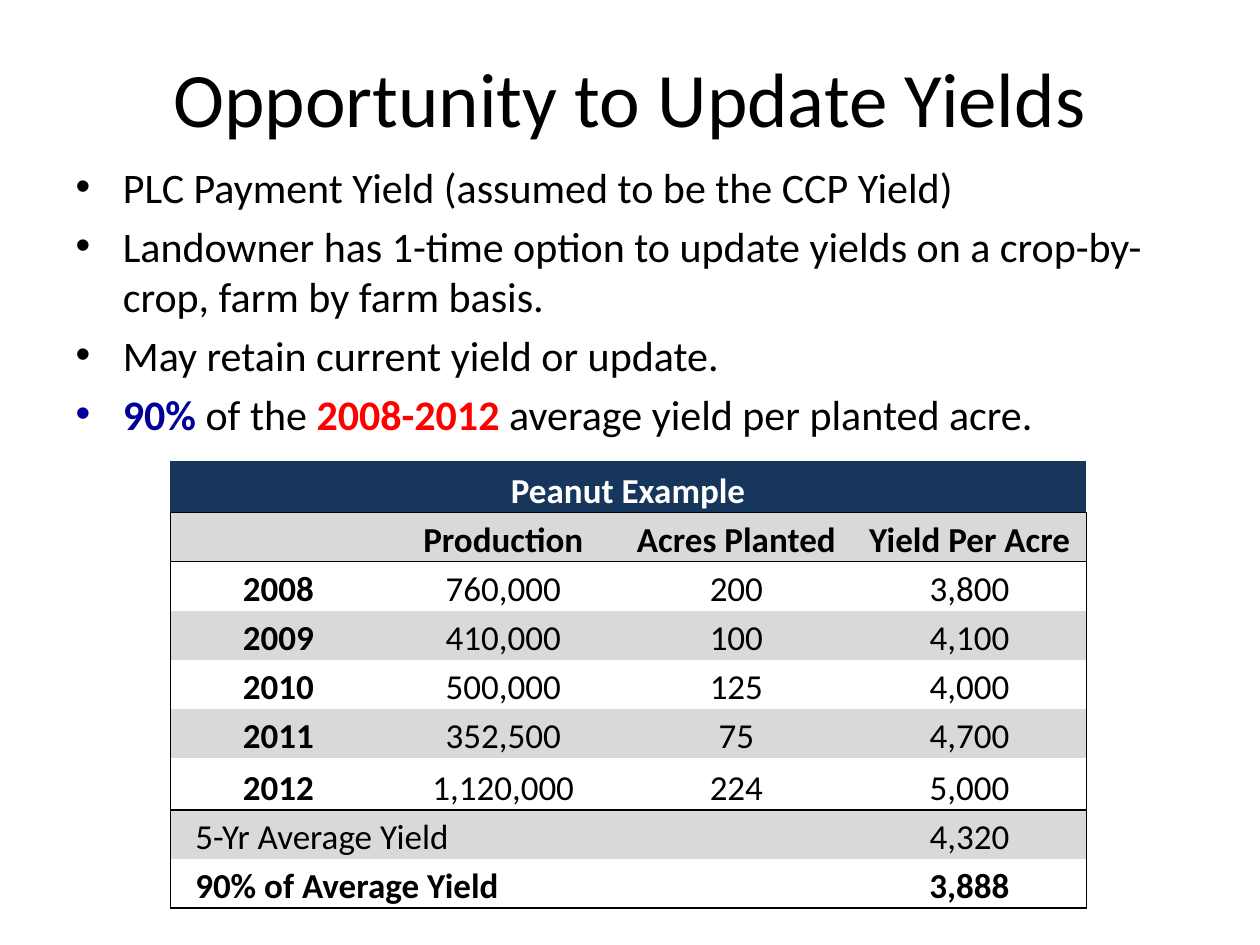
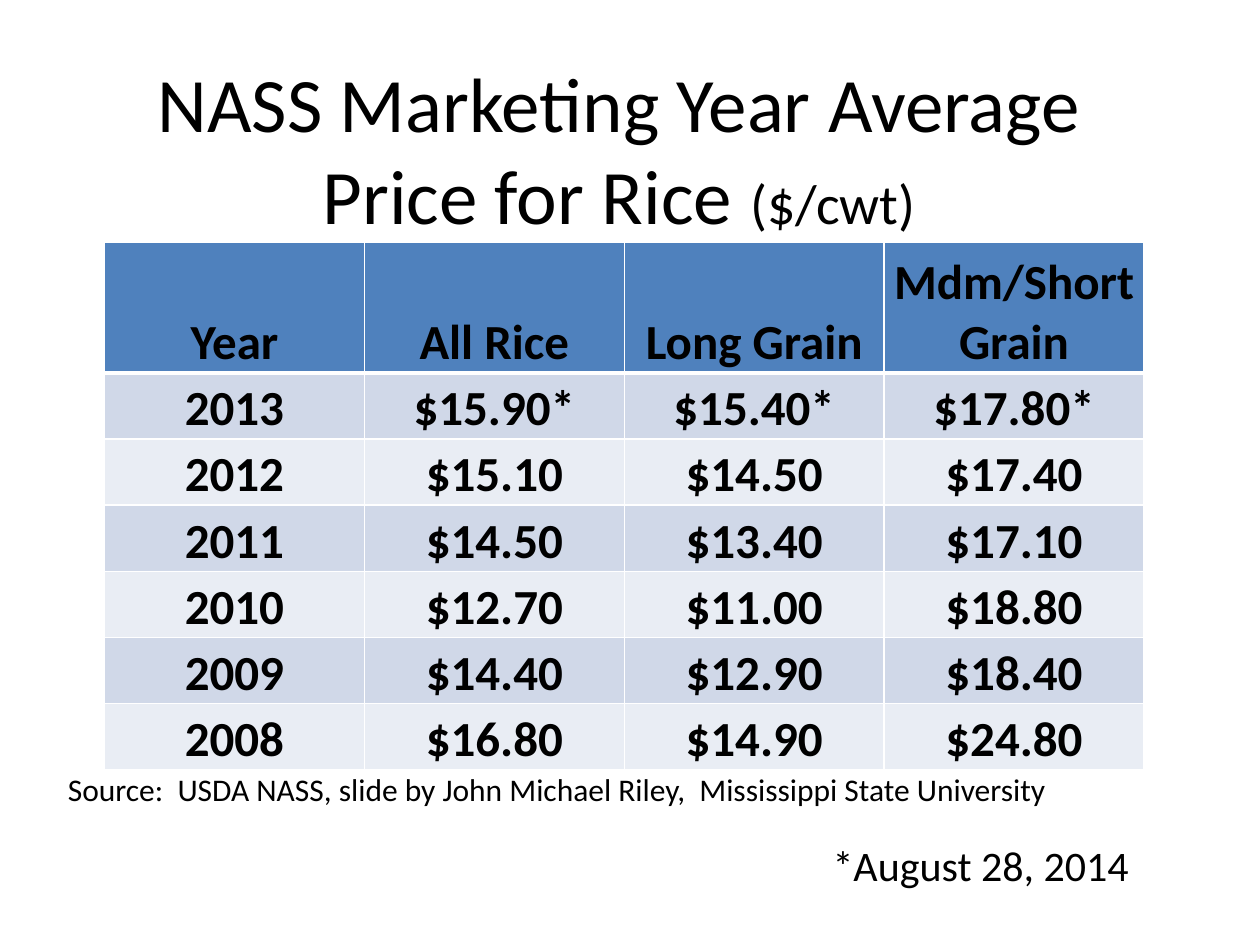
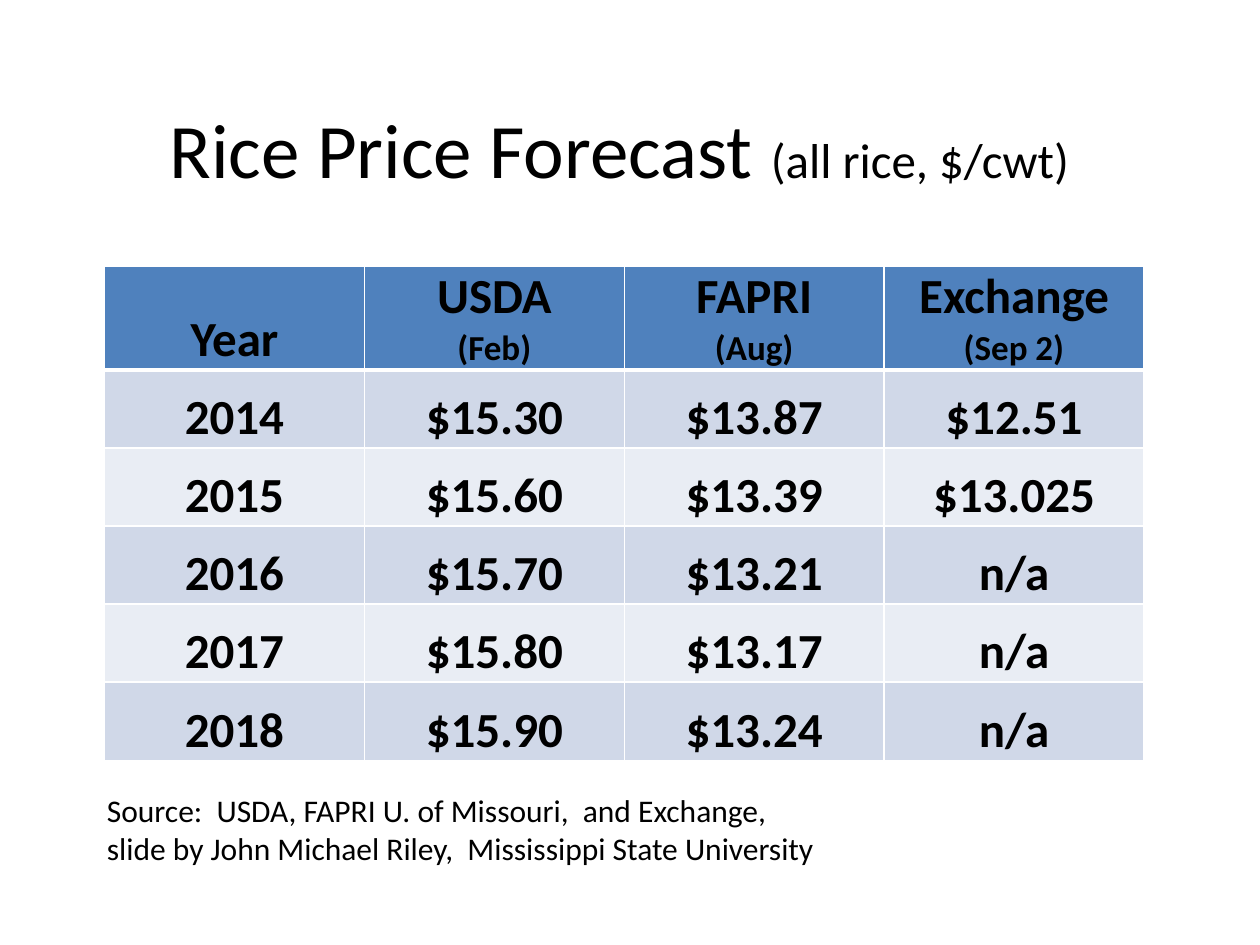
from lxml import etree
from pptx import Presentation
from pptx.dml.color import RGBColor
from pptx.enum.shapes import MSO_SHAPE
from pptx.enum.text import MSO_ANCHOR, MSO_AUTO_SIZE, PP_ALIGN
from pptx.oxml.ns import qn
from pptx.util import Inches, Pt

LEFT, CENTER = PP_ALIGN.LEFT, PP_ALIGN.CENTER
TOP, MIDDLE, BOTTOM = MSO_ANCHOR.TOP, MSO_ANCHOR.MIDDLE, MSO_ANCHOR.BOTTOM
NO_FIT, GROW = MSO_AUTO_SIZE.NONE, MSO_AUTO_SIZE.SHAPE_TO_FIT_TEXT
RECTANGLE = MSO_SHAPE.RECTANGLE

FONT = "Calibri"
BLACK, WHITE, RED, BLUE = "000000", "FFFFFF", "FF0000", "000099"
NAVY, GREY = "16365C", "D9D9D9"
HEADER_BLUE, BAND_DARK, BAND_LIGHT = "4F81BD", "D0D8E8", "E9EDF4"
TITLE_ONLY, TITLE_AND_CONTENT = 5, 1
PRICE_TITLE_BOX = (0.75, 0.42, 8.33, 1.5)

YIELD_POINTS = [
    [("PLC Payment Yield (assumed to be the CCP Yield)", {})],
    [("Landowner has 1-time option to update yields on a "
      "crop-by-crop, farm by farm basis.", {})],
    [("May retain current yield or update.", {})],
    [("90% ", {"color": BLUE, "bold": True}), ("of the ", {}),
     ("2008-2012 ", {"color": RED, "bold": True}),
     ("average yield per planted acre.", {})],
]
YIELD_ROWS = [
    ["Peanut Example", "", "", ""],
    ["", "Production", "Acres Planted", "Yield Per Acre"],
    ["2008", "760,000", "200", "3,800"],
    ["2009", "410,000", "100", "4,100"],
    ["2010", "500,000", "125", "4,000"],
    ["2011", "352,500", "75", "4,700"],
    ["2012", "1,120,000", "224", "5,000"],
    ["5-Yr Average Yield", "", "", "4,320"],
    ["90% of Average Yield", "", "", "3,888"],
]
PRICE_ROWS = [
    ["Year", "All Rice", "Long Grain", "Mdm/Short Grain"],
    ["2013", "$15.90*", "$15.40*", "$17.80*"],
    ["2012", "$15.10", "$14.50", "$17.40"],
    ["2011", "$14.50", "$13.40", "$17.10"],
    ["2010", "$12.70", "$11.00", "$18.80"],
    ["2009", "$14.40", "$12.90", "$18.40"],
    ["2008", "$16.80", "$14.90", "$24.80"],
]
FORECAST_ROWS = [
    ["Year", "USDA\n(Feb)", "FAPRI\n(Aug)", "Exchange\n(Sep 2)"],
    ["2014", "$15.30", "$13.87", "$12.51"],
    ["2015", "$15.60", "$13.39", "$13.025"],
    ["2016", "$15.70", "$13.21", "n/a"],
    ["2017", "$15.80", "$13.17", "n/a"],
    ["2018", "$15.90", "$13.24", "n/a"],
]


def rgb(value):
    """Turn a hex string into a colour."""
    return RGBColor.from_string(value)


def set_values(target, values):
    """Set every attribute named in a dict."""
    for name, value in values.items():
        setattr(target, name, value)


def add_spans(para, spans, size, align=LEFT):
    """Write formatted spans of text into a paragraph."""
    para.alignment = align
    for text, changes in spans:
        look = {"size": size, "bold": False, "color": BLACK, **changes}
        span = para.add_run()
        span.text = text
        set_values(span.font, {"name": FONT, "size": Pt(look["size"]), "bold": look["bold"]})
        span.font.color.rgb = rgb(look["color"])


def place(shape, box):
    """Move a shape to a box given in inches."""
    sides = ("left", "top", "width", "height")
    set_values(shape, dict(zip(sides, map(Inches, box))))


def add_title(slide, box, spans):
    """Fill the title placeholder."""
    place(slide.shapes.title, box)
    frame = slide.shapes.title.text_frame
    set_values(frame, {"vertical_anchor": MIDDLE, "word_wrap": True, "auto_size": NO_FIT})
    add_spans(frame.paragraphs[0], spans, 44, CENTER)


def add_bullets(slide, box, points):
    """Fill the body placeholder with a bulleted list."""
    body = slide.placeholders[1]
    place(body, box)
    frame = body.text_frame
    frame.auto_size = NO_FIT
    for index, spans in enumerate(points):
        para = frame.add_paragraph() if index else frame.paragraphs[0]
        add_spans(para, spans, 24)
    frame.paragraphs[0].space_before = Pt(0)


def add_note(slide, box, lines, size, fill=None):
    """Add an unwrapped note, on a filled rectangle when a fill is given."""
    area = tuple(map(Inches, box))
    if fill:
        note = slide.shapes.add_shape(RECTANGLE, *area)
        note.shadow.inherit = False
        note.fill.solid()
        note.fill.fore_color.rgb = rgb(fill)
        note.line.fill.background()
    else:
        note = slide.shapes.add_textbox(*area)
    frame = note.text_frame
    set_values(frame, {"word_wrap": False, "auto_size": GROW, "vertical_anchor": TOP})
    for index, line in enumerate(lines):
        para = frame.add_paragraph() if index else frame.paragraphs[0]
        add_spans(para, [(line, {})], size)


def set_borders(cell, widths, color):
    """Draw left, right, top and bottom cell borders; a zero width hides one."""
    properties = cell._tc.get_or_add_tcPr()
    for side, width in zip("LRTB", widths):
        line = etree.SubElement(properties, qn(f"a:ln{side}"), w=str(Pt(width)))
        if width:
            paint = etree.SubElement(line, qn("a:solidFill"))
            etree.SubElement(paint, qn("a:srgbClr"), val=color)
        else:
            etree.SubElement(line, qn("a:noFill"))


def add_grid(slide, left, top, widths, heights):
    """Add a plain table with the given column widths and row heights."""
    area = map(Inches, (left, top, sum(widths), sum(heights)))
    table = slide.shapes.add_table(len(heights), len(widths), *area).table
    set_values(table, {"first_row": False, "horz_banding": False})
    for column, width in zip(table.columns, widths):
        column.width = Inches(width)
    for row, height in zip(table.rows, heights):
        row.height = Inches(height)
    return table


def fill_cell(cell, lines, size, fill, align=CENTER, indent=0.01):
    """Set the fill, margins and lines of text of a cell."""
    cell.fill.solid()
    cell.fill.fore_color.rgb = rgb(fill)
    set_values(cell, {"vertical_anchor": BOTTOM, "margin_left": Inches(indent),
                      "margin_right": Inches(0.01), "margin_top": Inches(0.01),
                      "margin_bottom": 0})
    for index, spans in enumerate(lines):
        frame = cell.text_frame
        para = frame.add_paragraph() if index else frame.paragraphs[0]
        add_spans(para, spans, size, align)


def add_yield_table(slide, left, top):
    """Add the peanut table with its banner, yearly rows and averages."""
    heights = [0.41] + [0.39] * 5 + [0.41] + [0.39] * 2
    table = add_grid(slide, left, top, [1.72] + [1.85] * 3, heights)
    rules = {1: 0.5, 2: 0.5, 7: 1, 9: 1}
    for r, row in enumerate(YIELD_ROWS):
        fill = NAVY if r == 0 else GREY if r % 2 else WHITE
        for c, text in enumerate(row):
            cell = table.cell(r, c)
            set_borders(cell, (0.5 if r and c == 0 else 0, 0.5 if r and c == 3 else 0,
                               rules.get(r, 0), rules.get(r + 1, 0)), BLACK)
            summary = r > 6 and c == 0
            look = {"bold": r < 2 or r == 8 or (c == 0 and r < 7),
                    "color": BLACK if r else WHITE}
            fill_cell(cell, [[(text, look)]] if text else [], 20, fill,
                      LEFT if summary else CENTER, 0.2 if summary else 0.01)
    table.cell(0, 0).merge(table.cell(0, 3))
    for r in (7, 8):
        table.cell(r, 0).merge(table.cell(r, 1))


def add_price_table(slide, box, rows, header_height):
    """Add a banded price table whose body rows share the height left over."""
    left, top, width, height = box
    columns, body_rows = len(rows[0]), len(rows) - 1
    heights = [header_height] + [(height - header_height) / body_rows] * body_rows
    table = add_grid(slide, left, top, [width / columns] * columns, heights)
    for r, row in enumerate(rows):
        fill = HEADER_BLUE if r == 0 else BAND_DARK if r % 2 else BAND_LIGHT
        for c, text in enumerate(row):
            cell = table.cell(r, c)
            set_borders(cell, (1, 1, 3 if r == 1 else 1, 3 if r == 0 else 1), WHITE)
            lines = [[(line, {"bold": True, "size": 20 if index else 28})]
                     for index, line in enumerate(text.split("\n"))]
            fill_cell(cell, lines, 28, fill)


def add_slide(deck, layout):
    """Add a slide with the numbered layout."""
    return deck.slides.add_slide(deck.slide_layouts[layout])


def build_yield_slide(deck):
    """Build the slide on updating yields."""
    slide = add_slide(deck, TITLE_AND_CONTENT)
    add_title(slide, (0.5, 0.3, 9, 0.93), [("Opportunity to Update Yields", {})])
    add_bullets(slide, (0.5, 1.23, 9, 2.43), YIELD_POINTS)
    add_yield_table(slide, 1.35, 3.66)


def build_price_slide(deck):
    """Build the slide on past rice prices."""
    slide = add_slide(deck, TITLE_ONLY)
    add_title(slide, PRICE_TITLE_BOX, [("NASS Marketing Year Average Price for Rice ", {}),
                                       ("($/cwt)", {"size": 32})])
    add_price_table(slide, (0.83, 1.92, 8.25, 4.19), PRICE_ROWS, 1.04)
    add_note(slide, (6.51, 6.61, 2.57, 0.5), ["*August 28, 2014"], 24)
    add_note(slide, (0.44, 6.06, 8.05, 0.4),
             ["Source:  USDA NASS, slide by John Michael Riley,  "
              "Mississippi State University"], 18)


def build_forecast_slide(deck):
    """Build the slide on forecast rice prices."""
    slide = add_slide(deck, TITLE_ONLY)
    add_title(slide, PRICE_TITLE_BOX, [("Rice Price Forecast ", {}),
                                       ("(all rice, $/cwt)", {"size": 28})])
    add_price_table(slide, (0.83, 2.11, 8.25, 3.92), FORECAST_ROWS, 0.82)
    add_note(slide, (0.75, 6.23, 5.88, 0.71),
             ["Source:  USDA, FAPRI U. of Missouri,  and Exchange,",
              "slide by John Michael Riley,  Mississippi State University"], 18, WHITE)


def main():
    """Build and save the deck."""
    deck = Presentation()
    set_values(deck, {"slide_width": Inches(10), "slide_height": Inches(7.5)})
    build_yield_slide(deck)
    build_price_slide(deck)
    build_forecast_slide(deck)
    deck.save("out.pptx")


if __name__ == "__main__":
    main()
